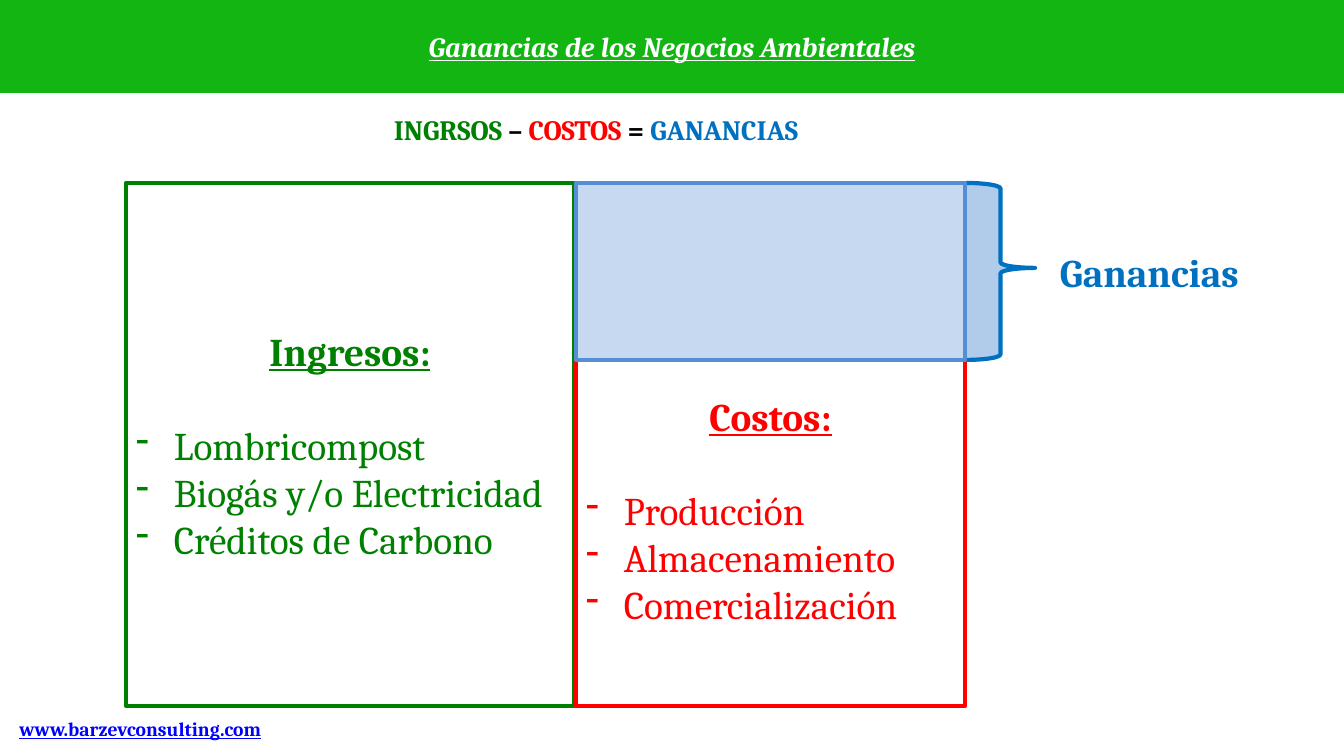
from lxml.etree import SubElement
from pptx import Presentation
from pptx.dml.color import RGBColor
from pptx.enum.shapes import MSO_SHAPE
from pptx.enum.text import MSO_ANCHOR, PP_ALIGN
from pptx.oxml.ns import qn
from pptx.util import Pt

COLORS = {
    "green": "008000", "red": "FF0000", "blue": "0070C0", "black": "000000",
    "white": "FFFFFF", "link": "0000FF", "banner": "13B513",
    "brace": "8EB4E3", "profit": "C6D9F1", "profit_edge": "558ED5",
}
TITLE = "Ganancias de los Negocios Ambientales"
EQUATION = [("INGRSOS", "green"), (" – ", "black"), ("COSTOS", "red"),
            (" = ", "black"), ("GANANCIAS", "blue")]
INCOME = ("Ingresos:", ["Lombricompost", "Biogás y/o Electricidad", "Créditos de Carbono"])
COSTS = ("Costos:", ["Producción", "Almacenamiento", "Comercialización"])
PROFIT = "Ganancias"
WEBSITE = "www.barzevconsulting.com"

PX = 914400 / 100.8
WIDTH, HEIGHT = 1344, 756
TOP, MIDDLE, BOTTOM = 183, 360, 706
INCOME_LEFT, INCOME_WIDTH = 126, 448
COSTS_LEFT, COSTS_WIDTH = 576, 389
BRACE_LEFT, BRACE_WIDTH = 966, 69
LINE_HEIGHT = 47
HEADING = {"size": Pt(28), "bold": True, "underline": True}
ITEM = {"size": Pt(28), "bold": False, "underline": False}


def px(length):
    return round(length * PX)


def rgb(name):
    return RGBColor.from_string(COLORS[name])


def add_box(left, top, width, height, fill=None, line=None, kind=MSO_SHAPE.RECTANGLE):
    box = page.shapes.add_shape(kind, px(left), px(top), px(width), px(height))
    box.shadow.inherit = False
    if fill:
        box.fill.solid()
        box.fill.fore_color.rgb = rgb(fill)
    else:
        box.fill.background()
    if line:
        box.line.color.rgb = rgb(line)
        box.line.width = Pt(3)
    else:
        box.line.fill.background()
    box.text_frame.word_wrap = True
    return box


def write(para, spans, formats, align=PP_ALIGN.CENTER):
    para.alignment = align
    for text, color in spans:
        span = para.add_run()
        span.text = text
        span.font.name = "Cambria"
        span.font.color.rgb = rgb(color)
        for name, value in formats.items():
            setattr(span.font, name, value)


def add_text(left, top, width, height, spans, formats, align=PP_ALIGN.CENTER):
    box = page.shapes.add_textbox(px(left), px(top), px(width), px(height))
    box.text_frame.word_wrap = True
    write(box.text_frame.paragraphs[0], spans, formats, align)
    return box


def add_list(box, content, color):
    """Write a centred heading and, one blank line's height below it, dashed items."""
    heading, items = content
    frame = box.text_frame
    frame.vertical_anchor = MSO_ANCHOR.MIDDLE
    write(frame.paragraphs[0], [(heading, color)], HEADING)
    for index, item in enumerate(items):
        para = frame.add_paragraph()
        if index == 0:
            para.space_before = Pt(LINE_HEIGHT * PX / 12700)
        properties = para._p.get_or_add_pPr()
        properties.set("marL", str(px(38)))
        properties.set("indent", str(px(-38)))
        SubElement(properties, qn("a:buChar"), char="-")
        write(para, [(item, color)], ITEM, PP_ALIGN.LEFT)


deck = Presentation()
deck.slide_width, deck.slide_height = px(WIDTH), px(HEIGHT)
page = deck.slides.add_slide(deck.slide_layouts[6])

website = add_text(6, 712, 269, 34, [(WEBSITE, "link")],
                   {"size": Pt(14), "bold": True, "underline": True})

income = add_box(INCOME_LEFT, TOP, INCOME_WIDTH, BOTTOM - TOP, line="green")
add_list(income, INCOME, "green")

costs = add_box(COSTS_LEFT, MIDDLE, COSTS_WIDTH, BOTTOM - MIDDLE, line="red")
costs.text_frame.margin_bottom = px(5 + LINE_HEIGHT)
add_list(costs, COSTS, "red")

brace = add_box(BRACE_LEFT, TOP, BRACE_WIDTH, MIDDLE - TOP, "brace", "blue",
                MSO_SHAPE.RIGHT_BRACE)
brace.adjustments[0], brace.adjustments[1] = 0.08, 0.48
brace_color = brace.fill._xPr.find(qn("a:solidFill"))[0]
SubElement(brace_color, qn("a:alpha"), val="69000")

add_text(1050, 243, 252, 57, [(PROFIT, "blue")], {"size": Pt(28), "bold": True},
         PP_ALIGN.LEFT)

banner = add_box(0, 0, WIDTH, 93, "banner")
banner.text_frame.vertical_anchor = MSO_ANCHOR.MIDDLE
write(banner.text_frame.paragraphs[0], [(TITLE, "white")],
      {"size": Pt(20), "bold": True, "italic": True, "underline": True})

add_box(COSTS_LEFT, TOP, COSTS_WIDTH, MIDDLE - TOP, "profit", "profit_edge")
add_text(277, 108, 638, 44, EQUATION, {"size": Pt(20), "bold": True})

deck.save("out.pptx")
